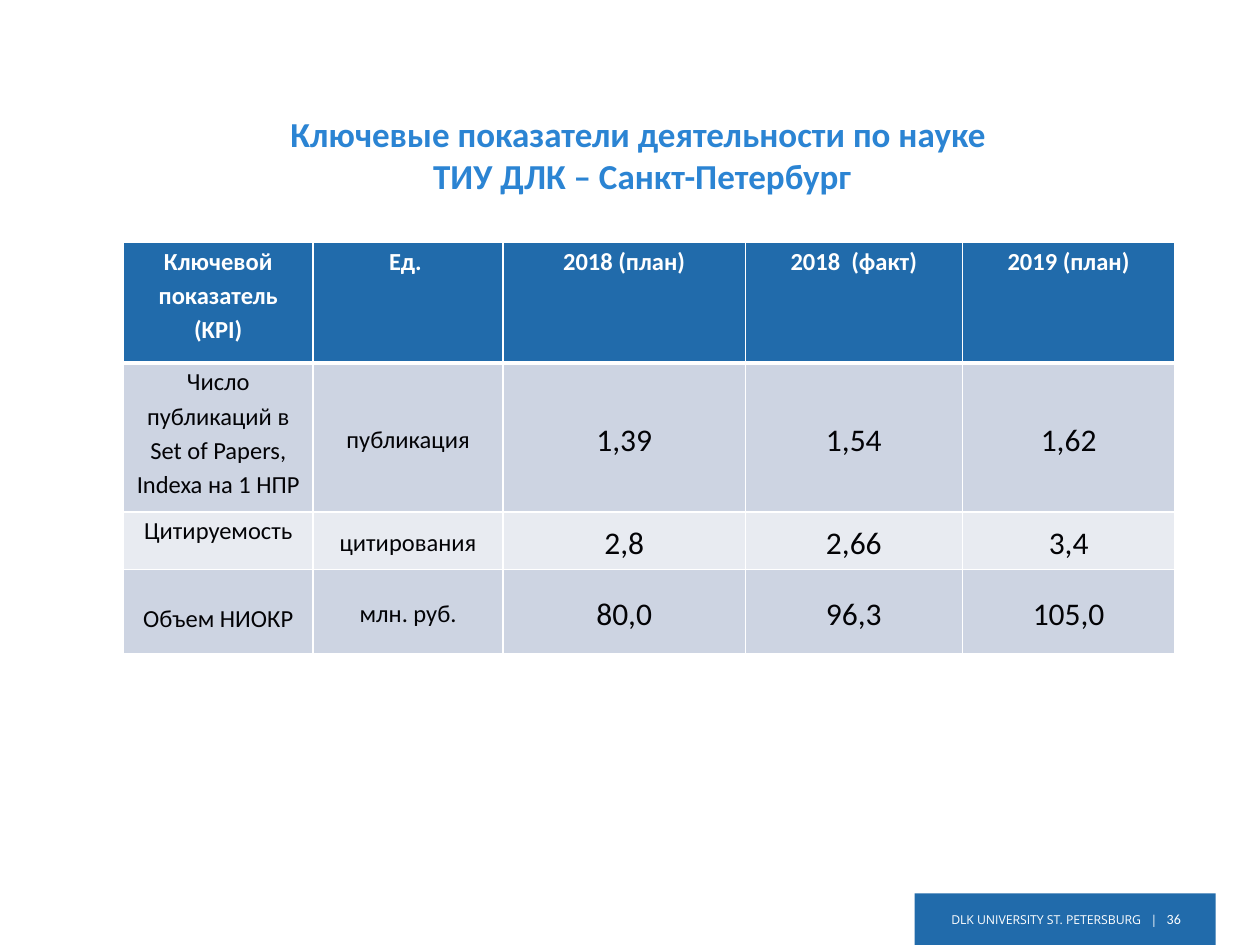
from lxml import etree
from pptx import Presentation
from pptx.dml.color import RGBColor
from pptx.enum.shapes import MSO_SHAPE
from pptx.enum.text import MSO_ANCHOR, MSO_AUTO_SIZE, PP_ALIGN
from pptx.oxml.ns import qn
from pptx.util import Pt

RECTANGLE = MSO_SHAPE.RECTANGLE
TOP, MIDDLE = MSO_ANCHOR.TOP, MSO_ANCHOR.MIDDLE
CENTER, RIGHT = PP_ALIGN.CENTER, PP_ALIGN.RIGHT
NO_AUTOFIT = MSO_AUTO_SIZE.NONE
TITLE_ONLY = 5

COLORS = {
    "white": "FFFFFF",
    "blue": "216BAB",
    "title": "2B84D3",
    "text": "030306",
    "band_dark": "CDD4E2",
    "band_light": "E8EBF1",
}

COLUMN_WIDTHS = [108.5, 108.5, 138.5, 124, 121.5]
ROW_HEIGHTS = [69, 85, 33, 48]
KPI_ROWS = [
    ["Ключевой\nпоказатель (KPI)", "Ед. ", "2018 (план)", "2018  (факт)", "2019 (план)"],
    ["Число публикаций в Set of Papers, Indexa на 1 НПР", "публикация", "1,39", "1,54", "1,62"],
    ["Цитируемость", "цитирования", "2,8", "2,66", "3,4"],
    ["Объем НИОКР", "млн. руб.", "80,0", "96,3", "105,0"],
]


class SlideBuilder:
    font = "Calibri"

    def __init__(self, slide):
        self.slide = slide

    def color(self, name):
        return RGBColor.from_string(COLORS[name])

    def format_run(self, run, size, color, bold=False, font=None):
        run.font.name = font or self.font
        run.font.size = Pt(size)
        run.font.bold = bold
        run.font.color.rgb = self.color(color)

    def format_text(self, text_frame, size, color, bold=False, spacing=1.0):
        for paragraph in text_frame.paragraphs:
            paragraph.alignment = CENTER
            paragraph.line_spacing = spacing
            for run in paragraph.runs:
                self.format_run(run, size, color, bold)

    def title(self, text, left, top, width, height):
        shape = self.slide.shapes.title
        shape.left, shape.top = Pt(left), Pt(top)
        shape.width, shape.height = Pt(width), Pt(height)
        text_frame = shape.text_frame
        text_frame.text = text
        text_frame.auto_size = NO_AUTOFIT
        text_frame.vertical_anchor = TOP
        text_frame.margin_top = Pt(23.5)
        self.format_text(text_frame, 20, "title", bold=True)

    def rectangle(self, left, top, width, height, color):
        shape = self.slide.shapes.add_shape(RECTANGLE, Pt(left), Pt(top), Pt(width), Pt(height))
        shape.shadow.inherit = False
        shape.fill.solid()
        shape.fill.fore_color.rgb = self.color(color)
        shape.line.fill.background()

    def footer(self, label, number, left, top, width, height):
        box = self.slide.shapes.add_textbox(Pt(left), Pt(top), Pt(width), Pt(height))
        text_frame = box.text_frame
        text_frame.word_wrap = False
        text_frame.vertical_anchor = MIDDLE
        paragraph = text_frame.paragraphs[0]
        paragraph.alignment = RIGHT
        paragraph.line_spacing = 0.7
        for text, size, font in ((label, 7, "Open Sans"), (number, 8, self.font)):
            run = paragraph.add_run()
            run.text = text
            self.format_run(run, size, "white", font=font)

    def cell_borders(self, cell, bottom_width):
        properties = cell._tc.get_or_add_tcPr()
        widths = {"a:lnL": 1, "a:lnR": 1, "a:lnT": 1, "a:lnB": bottom_width}
        for position, (tag, width) in enumerate(widths.items()):
            line = etree.Element(qn(tag), w=str(Pt(width)))
            fill = etree.SubElement(line, qn("a:solidFill"))
            etree.SubElement(fill, qn("a:srgbClr"), val=COLORS["white"])
            properties.insert(position, line)

    def table_cell(self, cell, text, row, column):
        is_header = row == 0
        cell.text = text
        cell.margin_left = cell.margin_right = Pt(5.4)
        cell.margin_top = cell.margin_bottom = 0
        cell.vertical_anchor = TOP if is_header or column == 0 else MIDDLE
        band = "band_dark" if row % 2 else "band_light"
        cell.fill.solid()
        cell.fill.fore_color.rgb = self.color("blue" if is_header else band)
        self.cell_borders(cell, 3 if is_header else 1)
        self.format_text(
            cell.text_frame,
            size=14 if is_header or column < 2 else 18,
            color="white" if is_header else "text",
            bold=is_header,
            spacing=1.15,
        )

    def table(self, rows, left, top, column_widths, row_heights):
        frame = self.slide.shapes.add_table(
            len(rows), len(column_widths), Pt(left), Pt(top),
            Pt(sum(column_widths)), Pt(sum(row_heights)),
        )
        table = frame.table
        for column, width in zip(table.columns, column_widths):
            column.width = Pt(width)
        for row, height in zip(table.rows, row_heights):
            row.height = Pt(height)
        for row, texts in enumerate(rows):
            for column, text in enumerate(texts):
                self.table_cell(table.cell(row, column), text, row, column)
        return table


def main():
    presentation = Presentation()
    presentation.slide_width, presentation.slide_height = Pt(720), Pt(540)
    slide = presentation.slides.add_slide(presentation.slide_layouts[TITLE_ONLY])
    builder = SlideBuilder(slide)
    builder.rectangle(522.7, 510.5, 172, 30, "blue")
    builder.footer("DLK UNIVERSITY ST. PETERSBURG   |   ", "36", 522, 519, 160, 14.4)
    builder.title(
        "Ключевые показатели деятельности по науке \nТИУ ДЛК – Санкт-Петербург",
        70.5, 41, 593, 310,
    )
    table = builder.table(KPI_ROWS, 70.5, 138.5, COLUMN_WIDTHS, ROW_HEIGHTS)
    table.cell(3, 0).margin_top = Pt(17)
    presentation.save("out.pptx")


if __name__ == "__main__":
    main()
